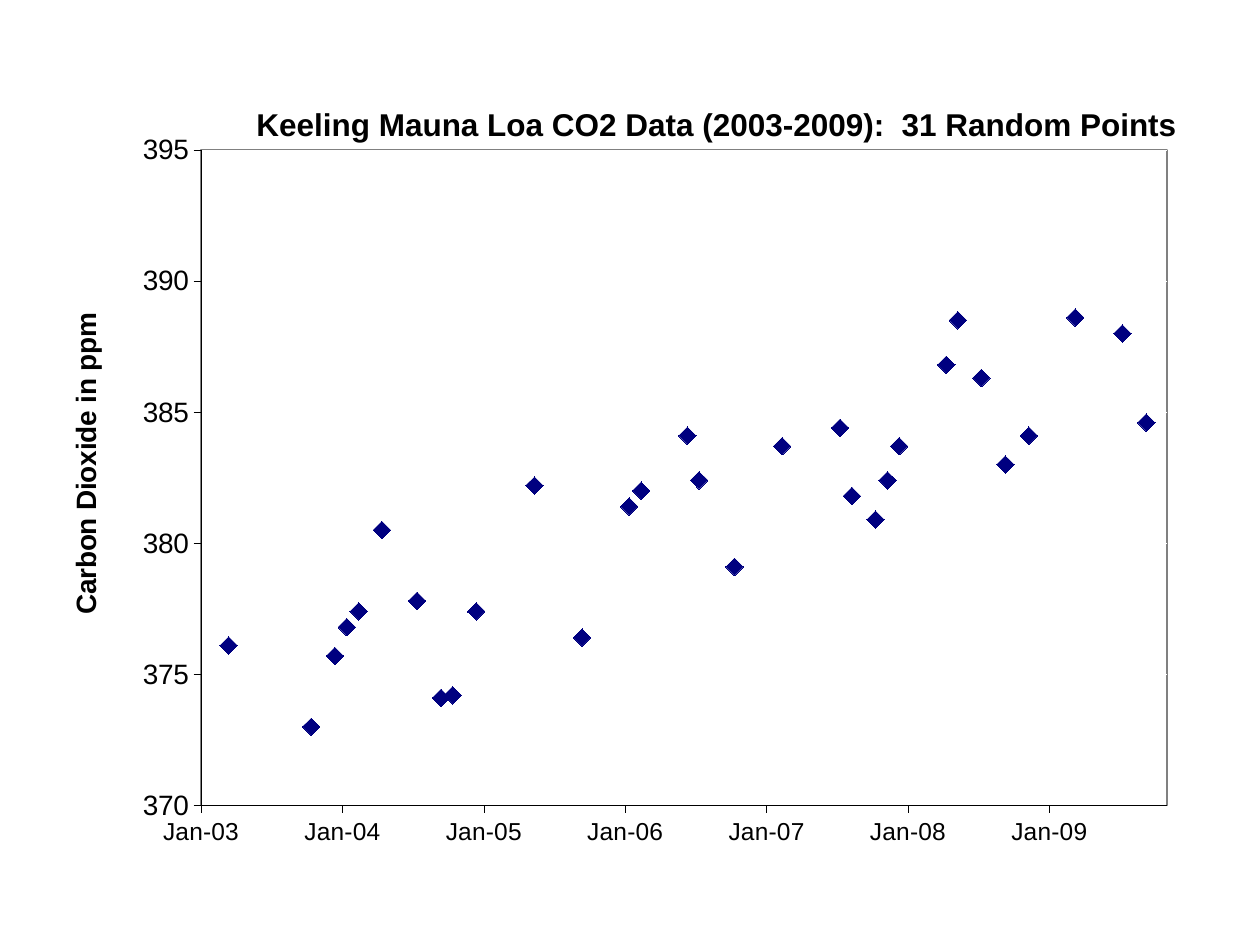
from lxml.etree import SubElement
from pptx import Presentation
from pptx.chart.data import XyChartData
from pptx.dml.color import RGBColor
from pptx.enum.chart import XL_CHART_TYPE as ChartType, XL_MARKER_STYLE as Marker
from pptx.enum.chart import XL_TICK_LABEL_POSITION as LabelPos, XL_TICK_MARK as Tick
from pptx.oxml import parse_xml
from pptx.oxml.ns import nsdecls, qn
from pptx.util import Cm, Pt


def color(hex_code):
    return RGBColor.from_string(hex_code)


def place(part, after=None, **values):
    """Give a chart part a manual layout in fractions of the chart."""
    for old in part.findall(qn("c:layout")):
        part.remove(old)
    layout = parse_xml(f"<c:layout {nsdecls('c')}/>")
    manual = SubElement(layout, qn("c:manualLayout"))
    for tag, value in values.items():
        SubElement(manual, qn(f"c:{tag}")).set("val", str(value))
    part.insert(0 if after is None else part.index(part.find(qn(after))) + 1, layout)


# Monthly readings: day serial of the 15th, CO2 in ppm
readings = [
    (37695, 376.1), (37909, 373), (37970, 375.7), (38001, 376.8), (38032, 377.4),
    (38092, 380.5), (38183, 377.8), (38245, 374.1), (38275, 374.2), (38336, 377.4),
    (38487, 382.2), (38610, 376.4), (38732, 381.4), (38763, 382), (38883, 384.1),
    (38913, 382.4), (39005, 379.1), (39128, 383.7), (39278, 384.4), (39309, 381.8),
    (39370, 380.9), (39401, 382.4), (39431, 383.7), (39553, 386.8), (39583, 388.5),
    (39644, 386.3), (39706, 383), (39767, 384.1), (39887, 388.6), (40009, 388),
    (40071, 384.6),
]

deck = Presentation()
deck.slide_width, deck.slide_height = Cm(25.4), Cm(19.05)
slide = deck.slides.add_slide(deck.slide_layouts[6])

# Scatter chart
co2_data = XyChartData()
co2_series = co2_data.add_series("Series 1")
for day, ppm in readings:
    co2_series.add_data_point(day, ppm)
chart = slide.shapes.add_chart(
    ChartType.XY_SCATTER, Cm(0.79), Cm(1.42), Cm(23.83), Cm(16.18), co2_data).chart
chart.has_legend = False
for name, value in {"name": "Arial", "size": Pt(10)}.items():
    setattr(chart.font, name, value)
chart.font.color.rgb = color("000000")

# Axes
dates, ppm_axis = chart.category_axis, chart.value_axis
axis_formats = [
    (dates, 14, r"[$-409]mmm\-yy;@",
     {"minimum_scale": 37624, "maximum_scale": 40124, "major_unit": 366}),
    (ppm_axis, 16, "0",
     {"minimum_scale": 370, "maximum_scale": 395, "major_unit": 5}),
]
for axis, size, number_format, scale in axis_formats:
    look = {"major_tick_mark": Tick.OUTSIDE, "minor_tick_mark": Tick.NONE,
            "tick_label_position": LabelPos.LOW}
    for name, value in {**scale, **look}.items():
        setattr(axis, name, value)
    labels = axis.tick_labels
    labels.number_format, labels.number_format_is_linked = number_format, False
    labels.font.size, labels.font.name = Pt(size), "Arial"
    labels.font.color.rgb = color("000000")
    axis.format.line.width = Pt(0.25)
    axis.format.line.color.rgb = color("000000")
dates.has_major_gridlines = False
ppm_axis.has_major_gridlines = True
grid = ppm_axis.major_gridlines.format.line
grid.width, grid.color.rgb = Pt(0.25), color("FFFFFF")

# Titles
chart.has_title = ppm_axis.has_title = True
titles = [
    (chart.chart_title, "Keeling Mauna Loa CO2 Data (2003-2009):  31 Random Points",
     18, 0.179, 0.034),
    (ppm_axis.axis_title, "Carbon Dioxide in ppm", 16, 0.02, 0.296),
]
for title, text, size, x, y in titles:
    title.text_frame.text = text
    font = title.text_frame.paragraphs[0].runs[0].font
    for name, value in {"name": "Arial", "size": Pt(size), "bold": True}.items():
        setattr(font, name, value)
    font.color.rgb = color("000000")
    place(title._element, after="c:tx", xMode="edge", yMode="edge", x=x, y=y)
ppm_axis.axis_title.text_frame._txBody.bodyPr.set("rot", "-5400000")
ppm_axis.axis_title.text_frame._txBody.bodyPr.set("vert", "horz")

# Diamond markers without a joining line
plot = chart.plots[0]
plot.vary_by_categories = False
points = plot.series[0]
points.smooth = False
points.format.line.fill.background()
points.marker.style, points.marker.size = Marker.DIAMOND, 10
points.marker.format.fill.solid()
points.marker.format.fill.fore_color.rgb = color("000080")
points.marker.format.line.color.rgb = color("000080")

# Plot area: inner position, white fill, grey frame
plot_area = chart._chartSpace.chart.plotArea
place(plot_area, layoutTarget="inner", xMode="edge", yMode="edge",
      x=0.137, y=0.099, w=0.817, h=0.817)
plot_area.append(parse_xml(
    f'<c:spPr {nsdecls("c", "a")}>'
    '<a:solidFill><a:srgbClr val="FFFFFF"/></a:solidFill>'
    '<a:ln w="12700"><a:solidFill><a:srgbClr val="808080"/></a:solidFill></a:ln>'
    '</c:spPr>'))

deck.save("out.pptx")
